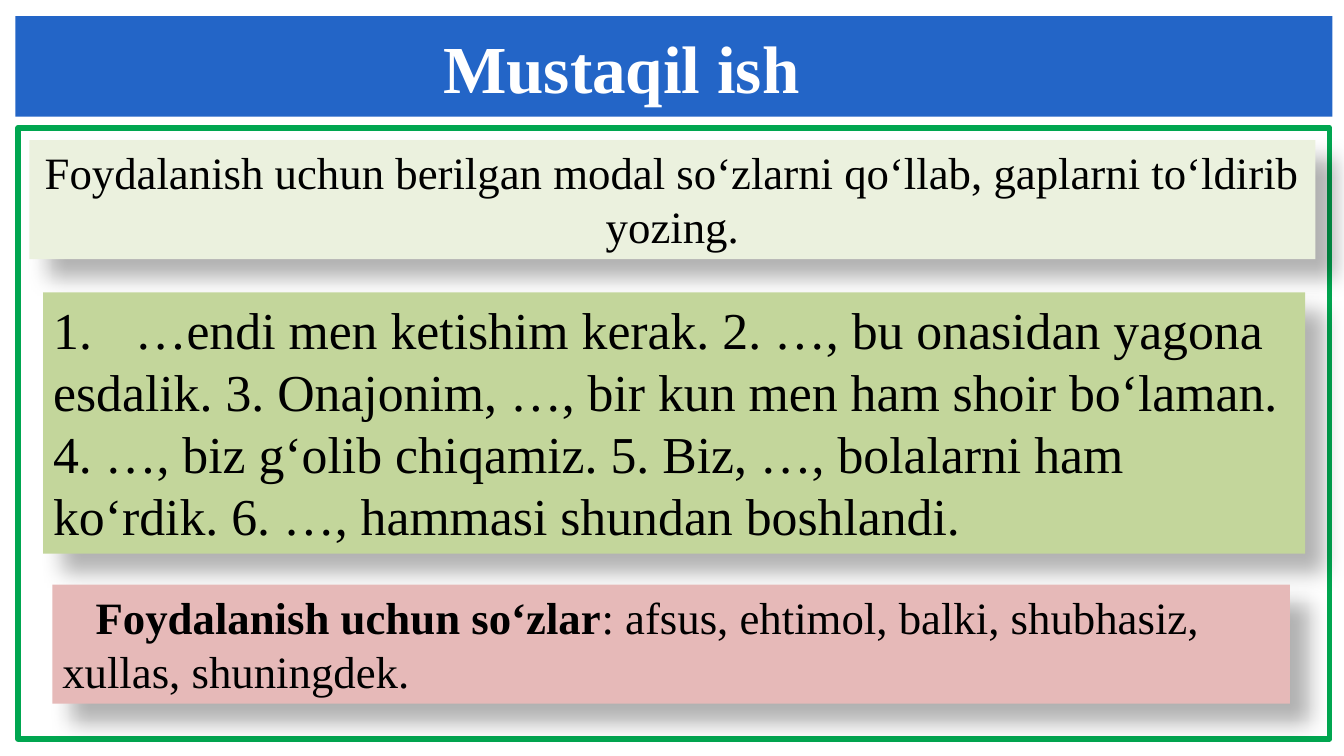
import pptx
import pptx.util
import pptx.dml.color
import pptx.enum.shapes
import pptx.enum.text
import pptx.oxml
import pptx.oxml.ns
from lxml import etree

Cm = pptx.util.Cm
Pt = pptx.util.Pt
ALIGN = pptx.enum.text.PP_ALIGN
FONT = "Times New Roman"


def color(value):
    return pptx.dml.color.RGBColor.from_string(value)


def add_rect(s, box, fill=None, line=None, width=0):
    sp = s.shapes.add_shape(
        pptx.enum.shapes.MSO_SHAPE.RECTANGLE, *[Cm(v) for v in box])
    sp.shadow.inherit = False
    if fill:
        sp.fill.solid()
        sp.fill.fore_color.rgb = color(fill)
    else:
        sp.fill.background()
    if line:
        sp.line.color.rgb = color(line)
        sp.line.width = Pt(width)
    else:
        sp.line.fill.background()
    return sp


def add_shadow(sp):
    qn = pptx.oxml.ns.qn
    effects = sp._element.spPr.find(qn("a:effectLst"))
    shadow = etree.SubElement(
        effects, qn("a:outerShdw"), blurRad=str(Pt(15)), dist=str(Pt(18)),
        dir="2700000", algn="tl", rotWithShape="0")
    black = etree.SubElement(shadow, qn("a:srgbClr"), val="000000")
    etree.SubElement(black, qn("a:alpha"), val="30000")


def format_run(r, size, text_color="000000", bold=False):
    r.font.name = FONT
    r.font.size = Pt(size)
    r.font.bold = bold
    r.font.color.rgb = color(text_color)


def set_text(sp, text, size, align=ALIGN.LEFT, text_color="000000", bold=False):
    tf = sp.text_frame
    tf.word_wrap = True
    tf.vertical_anchor = pptx.enum.text.MSO_ANCHOR.TOP
    tf.text = text
    for p in tf.paragraphs:
        p.alignment = align
        for r in p.runs:
            format_run(r, size, text_color, bold)
    return tf


def set_indent(p, left, first):
    pPr = p._p.get_or_add_pPr()
    pPr.set("marL", str(Cm(left)))
    pPr.set("indent", str(Cm(first)))
    return pPr


def add_card(s, box, fill, text, size, align=ALIGN.LEFT, bold=False):
    sp = add_rect(s, box, fill)
    add_shadow(sp)
    return set_text(sp, text, size, align, bold=bold)


def add_title(s, text):
    sp = s.shapes.add_textbox(Cm(10.92), Cm(0.53), Cm(18.8), Cm(2.31))
    set_text(sp, text, 48, text_color="FFFFFF", bold=True)


def add_sentences(s):
    tf = add_card(
        s, (1.09, 7.37, 31.8, 6.58), "C3D69B",
        "…endi men ketishim kerak. 2. …, bu onasidan yagona\n"
        "esdalik. 3. Onajonim, …, bir kun men ham shoir bo‘laman.\n"
        "4. …, biz g‘olib chiqamiz. 5. Biz, …, bolalarni ham ko‘rdik. "
        "6. …, hammasi shundan boshlandi.", 37)
    pPr = set_indent(tf.paragraphs[0], 2.06, -2.06)
    etree.SubElement(pPr, pptx.oxml.ns.qn("a:buAutoNum"), type="arabicPeriod")


def add_word_list(s):
    tf = add_card(s, (1.32, 14.73, 31.19, 3), "E6B9B8",
                  "Foydalanish uchun so‘zlar", 32, bold=True)
    p = tf.paragraphs[0]
    set_indent(p, 0, 0.84)
    r = p.add_run()
    r.text = ": afsus, ehtimol, balki, shubhasiz, xullas, shuningdek."
    format_run(r, 32)


def main():
    prs = pptx.Presentation()
    prs.slide_width = Cm(33.87)
    prs.slide_height = Cm(19.05)
    s = prs.slides.add_slide(prs.slide_layouts[6])
    add_rect(s, (0.46, 3.22, 33.05, 15.4), line="00A650", width=4)
    add_rect(s, (0.39, 0.41, 33.19, 2.53), "2365C7")
    add_title(s, "Mustaqil ish")
    add_card(s, (0.74, 3.53, 32.41, 3), "EBF1DE",
             "Foydalanish uchun berilgan modal so‘zlarni qo‘llab, "
             "gaplarni to‘ldirib yozing.", 32, ALIGN.CENTER)
    add_sentences(s)
    add_word_list(s)
    prs.save("out.pptx")


if __name__ == "__main__":
    main()
